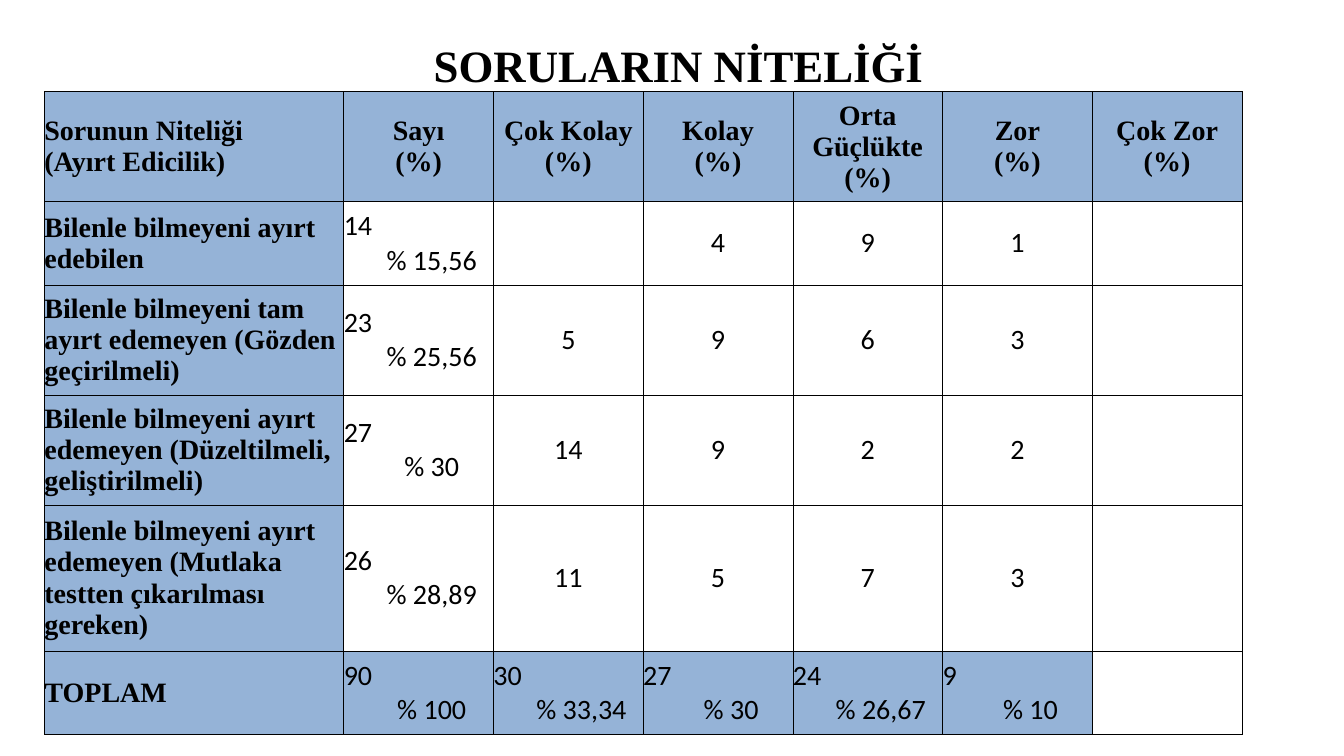
from lxml.etree import fromstring
from pptx import Presentation
from pptx.dml.color import RGBColor
from pptx.enum.text import MSO_ANCHOR, PP_ALIGN
from pptx.util import Inches, Pt

BLACK = RGBColor(0x00, 0x00, 0x00)
BLUE = RGBColor(0x95, 0xB3, 0xD7)
DRAWING = "http://schemas.openxmlformats.org/drawingml/2006/main"
HEADING_FONT, NUMBER_FONT = "Times New Roman", "Calibri"

COLUMN_WIDTHS = [2.97] + [1.485] * 6
ROW_HEIGHTS = [1.09, 0.83, 1.09, 1.09, 1.45, 0.83]
# A pair holds a count and its percentage, set on two lines.
ROWS = [
    ["Sorunun Niteliği\n(Ayırt Edicilik)", "Sayı\n(%)", "Çok Kolay\n(%)", "Kolay\n(%)",
     "Orta Güçlükte\n(%)", "Zor\n(%)", "Çok Zor\n(%)"],
    ["Bilenle bilmeyeni ayırt\nedebilen", ("14", "% 15,56"), "", "4", "9", "1", ""],
    ["Bilenle bilmeyeni tam ayırt edemeyen (Gözden geçirilmeli)",
     ("23", "% 25,56"), "5", "9", "6", "3", ""],
    ["Bilenle bilmeyeni ayırt edemeyen (Düzeltilmeli, geliştirilmeli)",
     ("27", "% 30"), "14", "9", "2", "2", ""],
    ["Bilenle bilmeyeni ayırt edemeyen (Mutlaka testten çıkarılması gereken)",
     ("26", "% 28,89"), "11", "5", "7", "3", ""],
    ["TOPLAM", ("90", "% 100"), ("30", "% 33,34"), ("27", "% 30"),
     ("24", "% 26,67"), ("9", "% 10"), ""],
]


def style_font(font, name, size, bold):
    font.name, font.size, font.bold = name, Pt(size), bold
    font.color.rgb = BLACK


def add_borders(cell):
    properties = cell._tc.get_or_add_tcPr()
    for index, side in enumerate(("lnL", "lnR", "lnT", "lnB")):
        properties.insert(index, fromstring(
            f'<a:{side} xmlns:a="{DRAWING}" w="{Pt(0.5)}"><a:solidFill>'
            f'<a:srgbClr val="{BLACK}"/></a:solidFill></a:{side}>'))


deck = Presentation()
deck.slide_width, deck.slide_height = Inches(13.33), Inches(7.5)
page = deck.slides.add_slide(deck.slide_layouts[5])

title = page.shapes.title
title.left, title.top = Inches(0.73), Inches(0.24)
title.width, title.height = Inches(12), Inches(0.81)
title.text_frame.vertical_anchor = MSO_ANCHOR.MIDDLE
para = title.text_frame.paragraphs[0]
para.text = "SORULARIN NİTELİĞİ"
para.alignment = PP_ALIGN.CENTER
style_font(para.font, HEADING_FONT, 32, True)

table = page.shapes.add_table(
    len(ROW_HEIGHTS), len(COLUMN_WIDTHS), Inches(0.44), Inches(0.91),
    Inches(sum(COLUMN_WIDTHS)), Inches(sum(ROW_HEIGHTS))).table
table.first_row = table.horz_banding = False
for column, width in zip(table.columns, COLUMN_WIDTHS):
    column.width = Inches(width)
for row, height in zip(table.rows, ROW_HEIGHTS):
    row.height = Inches(height)

for row_index, entries in enumerate(ROWS):
    for column_index, entry in enumerate(entries):
        cell = table.cell(row_index, column_index)
        cell.vertical_anchor = MSO_ANCHOR.MIDDLE
        cell.margin_left = cell.margin_right = cell.margin_top = cell.margin_bottom = 0

        is_heading = row_index == 0 or column_index == 0
        is_total = row_index == len(ROWS) - 1 and entry
        if is_heading or is_total:
            cell.fill.solid()
            cell.fill.fore_color.rgb = BLUE
        else:
            cell.fill.background()
        add_borders(cell)

        is_pair = isinstance(entry, tuple)
        for line_index, line in enumerate(entry if is_pair else (entry,)):
            frame = cell.text_frame
            para = frame.add_paragraph() if line_index else frame.paragraphs[0]
            para.text = line
            is_count = is_pair and line_index == 0
            para.alignment = PP_ALIGN.LEFT if column_index == 0 or is_count else PP_ALIGN.CENTER
            if line_index:
                para._p.get_or_add_pPr().set("marL", str(Inches(0.26)))
            style_font(para.font, HEADING_FONT if is_heading else NUMBER_FONT, 20, is_heading)

deck.save("out.pptx")
